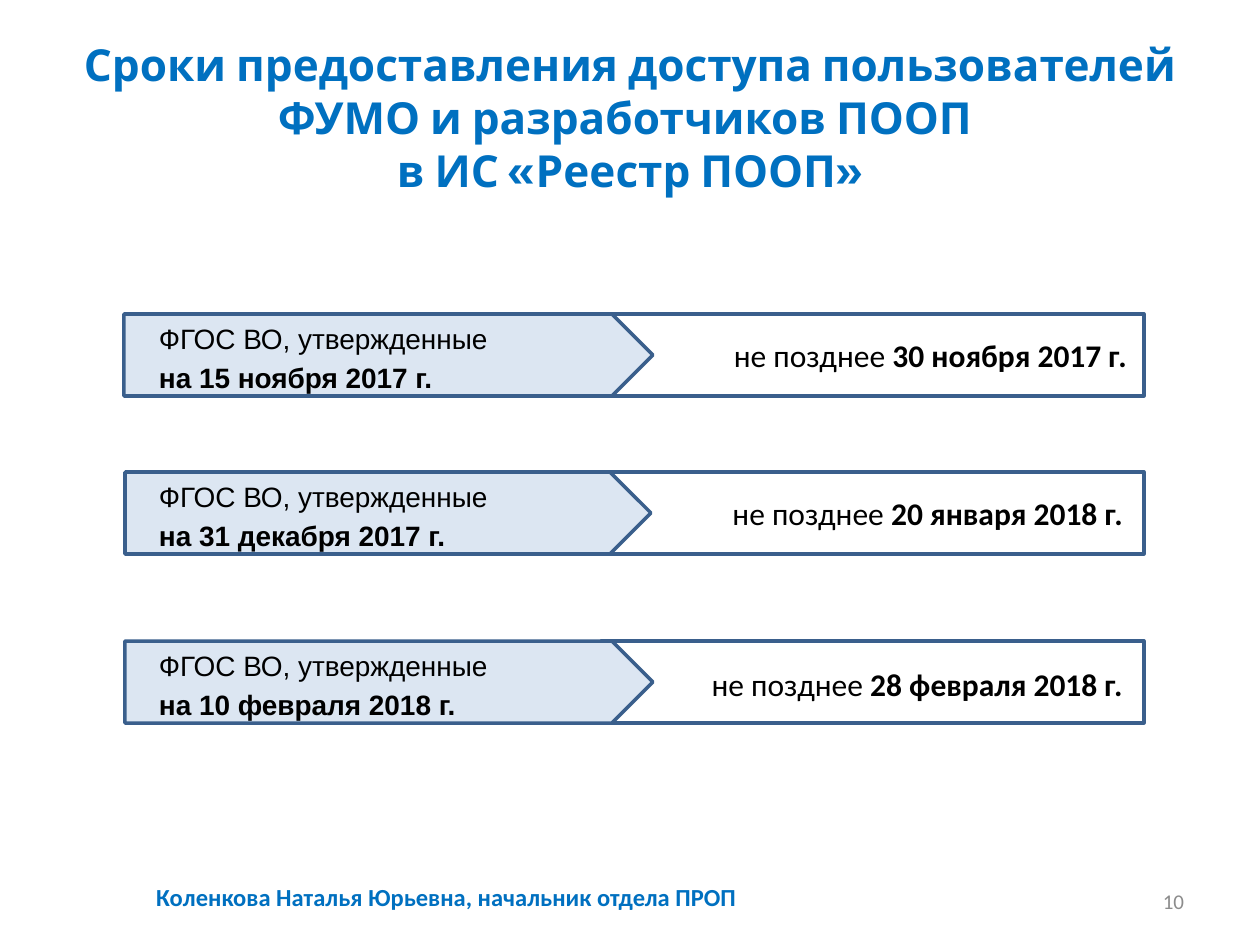
from pptx import Presentation
from pptx.dml.color import RGBColor
from pptx.enum.shapes import MSO_SHAPE as Shape
from pptx.enum.text import MSO_ANCHOR as Anchor, PP_ALIGN as Align
from pptx.util import Pt

PX = 914400 / 126  # EMU in one px
BLUE, BLACK, GREY = "0070C0", "000000", "8C8C8C"
SMALL_INSETS = (5, 3)

presentation = Presentation()
presentation.slide_width = round(1260 * PX)
presentation.slide_height = round(945 * PX)
slide = presentation.slides.add_slide(presentation.slide_layouts[6])


def add_box(kind, box, fill):
    shape = slide.shapes.add_shape(kind, *[round(n * PX) for n in box])
    shape.shadow.inherit = False
    shape.fill.solid()
    shape.fill.fore_color.rgb = RGBColor.from_string(fill)
    shape.line.color.rgb = RGBColor.from_string("3A5F8C")
    shape.line.width = Pt(2)


def add_text(box, runs, size, font, color, align, anchor=Anchor.TOP,
             insets=(13, 6), spacing=None):
    """Runs are (text, bold) pairs; None stands for a line break."""
    shape = slide.shapes.add_textbox(*[round(n * PX) for n in box])
    frame = shape.text_frame
    frame.word_wrap = True
    frame.vertical_anchor = anchor
    frame.margin_left = frame.margin_right = round(insets[0] * PX)
    frame.margin_top = frame.margin_bottom = round(insets[1] * PX)
    paragraph = frame.paragraphs[0]
    paragraph.alignment = align
    paragraph.line_spacing = spacing
    for item in runs:
        if item is None:
            paragraph.add_line_break()
            continue
        run = paragraph.add_run()
        run.text, run.font.bold = item
        run.font.size = Pt(size)
        run.font.name = font
        run.font.color.rgb = RGBColor.from_string(color)


# Title
add_text((63, 38, 1134, 158),
         [("Сроки предоставления доступа пользователей ФУМО и разработчиков ПООП ", True),
          None,
          ("в ИС «Реестр ПООП»", True)],
         25.2, "Cabin", BLUE, Align.CENTER, Anchor.MIDDLE)

# Rows: top, approval date, arrow left and width, deadline, deadline offset and width
rows = [
    (314, "на 15 ноября 2017 г.", 124, 529, "30 ноября 2017 г.", 19, 479),
    (472, "на 31 декабря 2017 г.", 125, 526, "20 января 2018 г.", 19, 475),
    (641, "на 10 февраля 2018 г.", 125, 528, "28 февраля 2018 г.", 21, 475),
]
for top, approved, left, width, deadline, offset, deadline_width in rows:
    add_box(Shape.RECTANGLE, (601, top, 543, 82), "FFFFFF")
    add_box(Shape.PENTAGON, (left, top, width, 82), "DCE6F2")
    add_text((154, top, 372, 83),
             [("ФГОС ВО, утвержденные ", False), (approved, True)],
             16, "Arial", BLACK, Align.LEFT, insets=SMALL_INSETS, spacing=1.15)
    add_text((653, top + offset, deadline_width, 44),
             [("не позднее ", False), (deadline, True)],
             18, "Calibri", BLACK, Align.RIGHT, insets=SMALL_INSETS)

# Footer and slide number
add_text((64, 876, 765, 50),
         [("Коленкова Наталья Юрьевна, начальник отдела ПРОП", True)],
         14, "Calibri", BLUE, Align.CENTER)
add_text((903, 876, 294, 50), [("10", False)],
         12, "Calibri", GREY, Align.RIGHT, Anchor.MIDDLE)

presentation.save("out.pptx")
